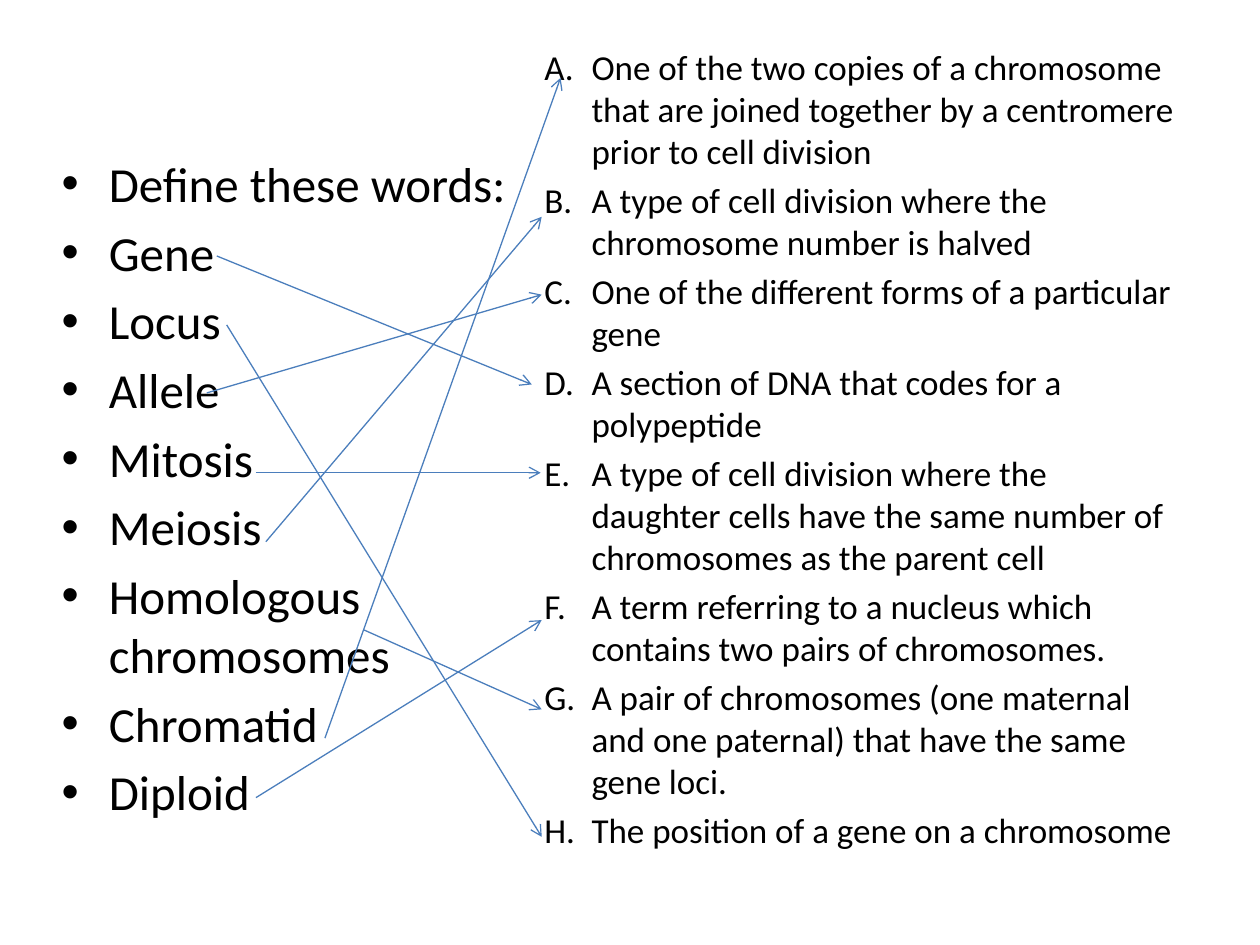
from dataclasses import dataclass

from lxml import etree
from pptx import Presentation
from pptx import util as u
from pptx.dml.color import RGBColor
from pptx.enum import shapes, text
from pptx.oxml import ns

FONT = "Calibri"
TEXT_COLOUR = "000000"
ARROW_COLOUR = "4B7EBC"
HANGING_INDENT = u.Cm(0.95)


@dataclass
class TextList:
    left: float
    top: float
    width: float
    height: float
    size: int
    bullet: str | None
    items: list[str]


@dataclass
class Match:
    """Arrow from a word to its definition, in centimetres."""
    start: tuple[float, float]
    end: tuple[float, float]


WORDS = [
    "Define these words:", "Gene", "Locus", "Allele", "Mitosis", "Meiosis",
    "Homologous chromosomes", "Chromatid", "Diploid",
]
DEFINITIONS = [
    "One of the two copies of a chromosome that are joined together by a centromere prior to cell division",
    "A type of cell division where the chromosome number is halved",
    "One of the different forms of a particular gene",
    "A section of DNA that codes for a polypeptide",
    "A type of cell division where the daughter cells have the same number of chromosomes as the parent cell",
    "A term referring to a nucleus which contains two pairs of chromosomes.",
    "A pair of chromosomes (one maternal and one paternal) that have the same gene loci.",
    "The position of a gene on a chromosome",
]
LETTERED = [f"{letter}.\t{definition}" for letter, definition in zip("ABCDEFGH", DEFINITIONS)]

LISTS = [
    TextList(0.99, 2.97, 11.23, 12.57, 28, "•", WORDS),
    TextList(10.72, 0.79, 13.41, 12.57, 20, None, LETTERED),
]
MATCHES = [
    Match((4.37, 5.16), (10.72, 7.75)),    # gene: D
    Match((4.57, 6.55), (10.92, 16.87)),   # locus: H
    Match((4.17, 7.92), (10.92, 5.94)),    # allele: C
    Match((5.16, 9.53), (10.9, 9.53)),     # mitosis: E
    Match((5.36, 10.92), (10.92, 4.37)),   # meiosis: B
    Match((7.34, 12.7), (10.92, 14.3)),    # homologous chromosomes: G
    Match((6.55, 14.88), (11.3, 1.57)),    # chromatid: A
    Match((5.16, 16.08), (10.92, 12.5)),   # diploid: F
]


def colour(hex_value: str) -> RGBColor:
    return RGBColor.from_string(hex_value)


def set_bullet(paragraph, bullet: str | None) -> None:
    properties = paragraph._p.get_or_add_pPr()
    properties.set("marL", str(HANGING_INDENT))
    properties.set("indent", str(-HANGING_INDENT))
    if bullet:
        etree.SubElement(properties, ns.qn("a:buChar")).set("char", bullet)
    else:
        etree.SubElement(properties, ns.qn("a:buNone"))


def fill_list(placeholder, content: TextList) -> None:
    placeholder.left, placeholder.top = u.Cm(content.left), u.Cm(content.top)
    placeholder.width, placeholder.height = u.Cm(content.width), u.Cm(content.height)
    frame = placeholder.text_frame
    frame.text = "\n".join(content.items)
    frame.word_wrap = True
    frame.auto_size = text.MSO_AUTO_SIZE.NONE
    for paragraph in frame.paragraphs:
        set_bullet(paragraph, content.bullet)
        paragraph.font.name = FONT
        paragraph.font.size = u.Pt(content.size)
        paragraph.font.color.rgb = colour(TEXT_COLOUR)


def draw_match(slide, match: Match) -> None:
    points = [u.Cm(value) for value in (*match.start, *match.end)]
    connector = slide.shapes.add_connector(shapes.MSO_CONNECTOR.STRAIGHT, *points)
    connector.line.color.rgb = colour(ARROW_COLOUR)
    connector.line.width = u.Pt(0.75)
    etree.SubElement(connector.line._get_or_add_ln(), ns.qn("a:tailEnd")).set("type", "arrow")
    etree.SubElement(connector._element.spPr, ns.qn("a:effectLst"))


def main() -> None:
    presentation = Presentation()
    presentation.slide_width, presentation.slide_height = u.Cm(25.4), u.Cm(19.05)

    # Two content columns without a title
    slide = presentation.slides.add_slide(presentation.slide_layouts.get_by_name("Two Content"))
    title = slide.shapes.title._element
    title.getparent().remove(title)

    # Words on the left, definitions on the right
    for placeholder, content in zip(slide.placeholders, LISTS):
        fill_list(placeholder, content)

    # Arrows joining each word to its definition
    for match in MATCHES:
        draw_match(slide, match)

    presentation.save("out.pptx")


if __name__ == "__main__":
    main()
